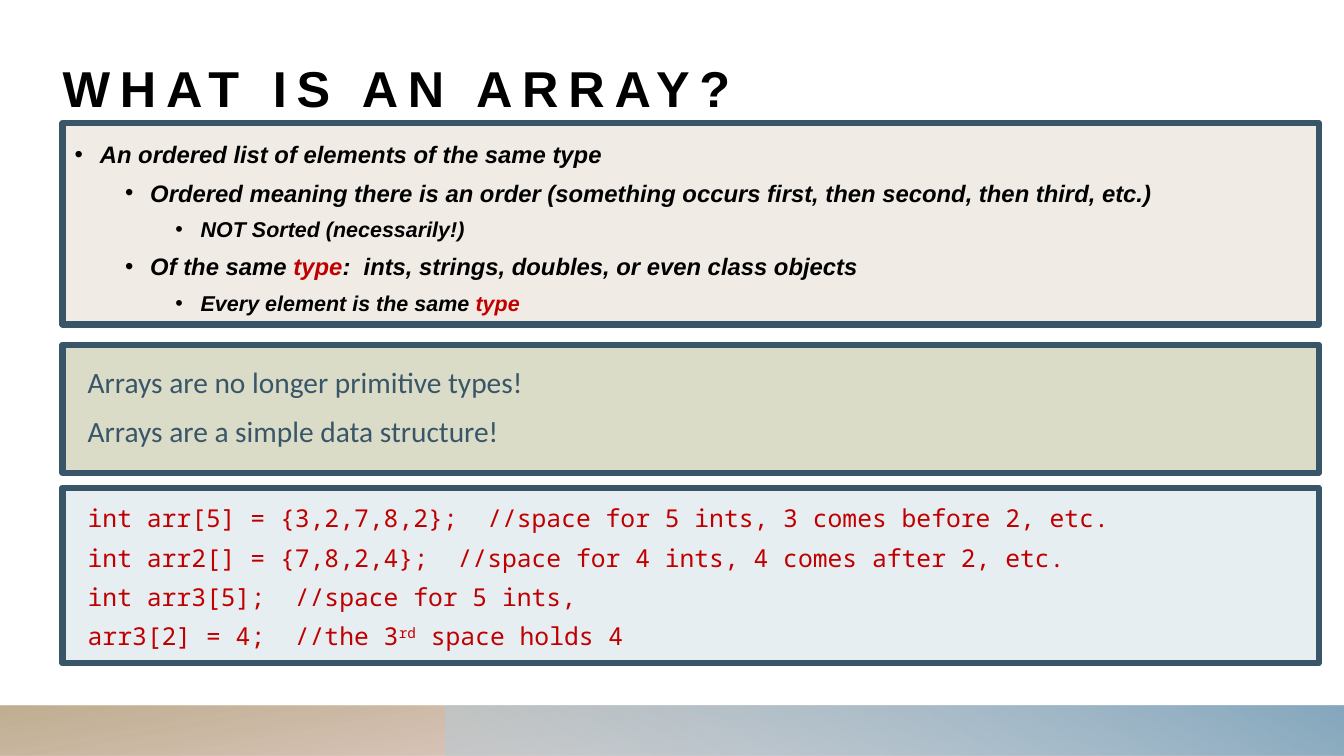
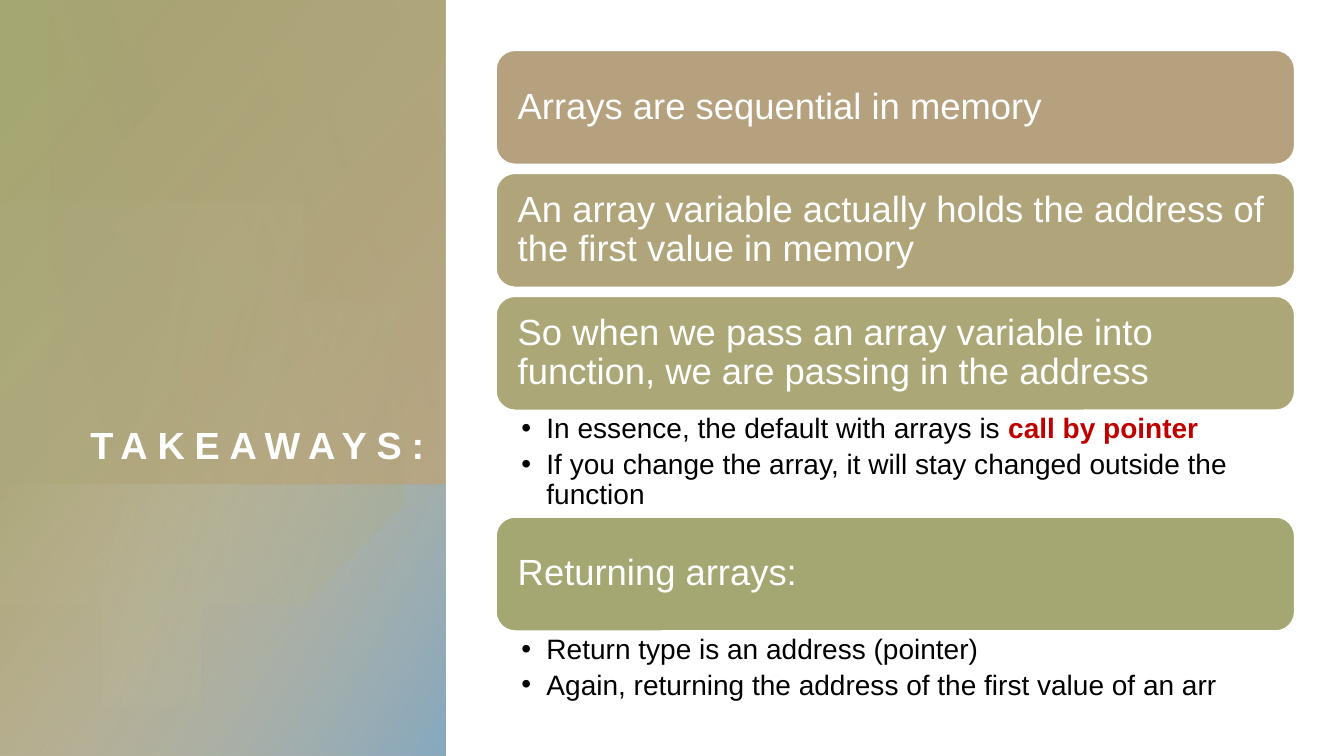
from math import acos, cos, sin

from pptx import Presentation
from pptx.dml.color import RGBColor
from pptx.enum.shapes import MSO_SHAPE
from pptx.enum.text import MSO_ANCHOR, MSO_AUTO_SIZE, PP_ALIGN
from pptx.oxml import parse_xml
from pptx.oxml.ns import nsdecls, qn
from pptx.util import Inches, Pt

BLACK = RGBColor(0x00, 0x00, 0x00)
WHITE = RGBColor(0xFF, 0xFF, 0xFF)
RED = RGBColor(0xC0, 0x00, 0x00)
SLATE = RGBColor(0x39, 0x56, 0x69)
CREAM = RGBColor(0xF0, 0xEC, 0xE5)
SAGE = RGBColor(0xDB, 0xDC, 0xC7)
ICE = RGBColor(0xE7, 0xEE, 0xF2)
TAN = RGBColor(0xB5, 0xA1, 0x7E)
KHAKI = RGBColor(0xB0, 0xA4, 0x7A)
MOSS = RGBColor(0xAC, 0xA7, 0x76)
OLIVE = RGBColor(0xA5, 0xA7, 0x72)
PALE_OLIVE = RGBColor(0xC9, 0xCA, 0xAA)
SAND = RGBColor(0xD3, 0xC7, 0xB2)
ROSE = RGBColor(0xBA, 0x8B, 0x7F)
BLUE = RGBColor(0x86, 0xA8, 0xBE)
PALE_BLUE = RGBColor(0xB6, 0xCB, 0xD8)

HEADING_FONT = "Arial"
NOTE_FONT = "Calibri"
CODE_FONT = "Noto Sans Mono"
SIDE_WIDTH = 4.42


class SlideBuilder:
    def __init__(self):
        self.deck = Presentation()
        self.deck.slide_width = Inches(13.33)
        self.deck.slide_height = Inches(7.5)
        self.page = None

    def new_page(self, layout):
        self.page = self.deck.slides.add_slide(self.deck.slide_layouts[layout])

    def place(self, index, left, top, width, height):
        box = self.page.placeholders[index]
        box.left, box.top = Inches(left), Inches(top)
        box.width, box.height = Inches(width), Inches(height)
        self.page.shapes._spTree.append(box._element)
        return box

    def shape(self, kind, left, top, width, height):
        shape = self.page.shapes.add_shape(
            kind, Inches(left), Inches(top), Inches(width), Inches(height))
        shape.shadow.inherit = False
        return shape

    def paint(self, shape, fill, line, weight):
        shape.fill.solid()
        shape.fill.fore_color.rgb = fill
        shape.line.color.rgb = line
        shape.line.width = Pt(weight)

    def blend(self, shape, angle, *stops):
        shape.line.fill.background()
        shape.fill.gradient()
        marks = "".join(
            f'<a:gs pos="{position * 1000}"><a:srgbClr val="{color}">'
            f'<a:alpha val="{opacity * 1000}"/></a:srgbClr></a:gs>'
            for position, color, opacity in stops)
        gradient = parse_xml(
            f'<a:gradFill rotWithShape="1" {nsdecls("a")}><a:gsLst>{marks}</a:gsLst>'
            f'<a:lin ang="{angle * 60000}" scaled="0"/></a:gradFill>')
        properties = shape._element.spPr
        properties.replace(properties.find(qn("a:gradFill")), gradient)

    def band(self, left, top, width, height, angle, *stops):
        self.blend(self.shape(MSO_SHAPE.RECTANGLE, left, top, width, height), angle, *stops)

    def disc(self, center_x, center_y, radius, angle, *stops):
        edge = acos(-center_x / radius)
        turns = [edge * step / 60 for step in range(-60, 61)]
        points = [(center_x + radius * cos(turn), center_y + radius * sin(turn))
                  for turn in turns]
        builder = self.page.shapes.build_freeform(*points[0], scale=Inches(1))
        builder.add_line_segments(points[1:], close=True)
        shape = builder.convert_to_shape()
        shape.shadow.inherit = False
        self.blend(shape, angle, *stops)

    def frame(self, shape, margins=(0, 0, 0, 0), anchor=MSO_ANCHOR.TOP):
        frame = shape.text_frame
        frame.word_wrap = True
        frame.auto_size = MSO_AUTO_SIZE.NONE
        frame.vertical_anchor = anchor
        (frame.margin_left, frame.margin_top,
         frame.margin_right, frame.margin_bottom) = map(Inches, margins)
        return frame

    def para(self, frame, first, spacing=1.0, before=0, after=0, align=PP_ALIGN.LEFT):
        para = frame.paragraphs[0] if first else frame.add_paragraph()
        para.alignment = align
        para.line_spacing = spacing
        para.space_before, para.space_after = Pt(before), Pt(after)
        return para

    def bullet(self, para, indent, level=0):
        para.level = level
        properties = para._p.get_or_add_pPr()
        properties.set("marL", str(Inches(indent)))
        properties.set("indent", str(Inches(-0.25)))
        properties.append(parse_xml(f'<a:buFont {nsdecls("a")} typeface="Arial"/>'))
        properties.append(parse_xml(f'<a:buChar {nsdecls("a")} char="•"/>'))

    def span(self, para, text, size, color, font=HEADING_FONT, bold=False, italic=False):
        span = para.add_run()
        span.text = text
        span.font.name, span.font.size = font, Pt(size)
        span.font.bold, span.font.italic = bold, italic
        span.font.color.rgb = color
        return span._r.get_or_add_rPr()

    def title(self, text, bounds, size, color, align=PP_ALIGN.LEFT):
        frame = self.frame(self.place(0, *bounds), anchor=MSO_ANCHOR.BOTTOM)
        para = self.para(frame, True, align=align)
        self.span(para, text, size, color, bold=True).set("spc", "700")

    def outline(self, bounds, items):
        box = self.place(1, *bounds)
        self.paint(box, CREAM, SLATE, 4.5)
        frame = self.frame(box, (0.12, 0.14, 0.18, 0.09))
        for number, (level, spans) in enumerate(items):
            para = self.para(frame, number == 0, 1.1, 5 if level else 10)
            self.bullet(para, 0.25 + 0.5 * level, level)
            for text, color in spans:
                self.span(para, text, 15.3 if level == 2 else 17, color,
                          bold=True, italic=True)

    def panel(self, bounds, fill, lines, font, size, color, spacing):
        shape = self.shape(MSO_SHAPE.RECTANGLE, *bounds)
        self.paint(shape, fill, SLATE, 4.5)
        frame = self.frame(shape, (0.25, 0.12, 0, 0))
        for number, line in enumerate(lines):
            para = self.para(frame, number == 0, spacing, 5)
            for text, raised in line:
                properties = self.span(para, text, size, color, font)
                if raised:
                    properties.set("baseline", "30000")

    def card(self, bounds, fill, text):
        shape = self.shape(MSO_SHAPE.ROUNDED_RECTANGLE, *bounds)
        self.paint(shape, fill, WHITE, 1)
        frame = self.frame(shape, (0.16, 0.16, 0.16, 0.16), MSO_ANCHOR.MIDDLE)
        self.span(self.para(frame, True, 0.9), text, 26, WHITE)

    def points(self, index, bounds, items):
        frame = self.frame(self.place(index, *bounds), (0.25, 0.04, 0.2, 0.04))
        for number, spans in enumerate(items):
            para = self.para(frame, number == 0, 0.9, after=4)
            self.bullet(para, 0.25)
            for text, color in spans:
                self.span(para, text, 20, color, bold=color == RED)

    def footer(self):
        self.band(0, 7, 13.33, 0.5, 260, (14, ROSE, 28), (100, TAN, 85))
        self.band(SIDE_WIDTH, 7, 13.33 - SIDE_WIDTH, 0.5, 300,
                  (9, PALE_BLUE, 55), (99, BLUE, 100))

    def side_panel(self):
        self.band(0, 0, SIDE_WIDTH, 7.5, 40, (8, OLIVE, 100), (100, TAN, 89))
        self.band(0, 4.81, SIDE_WIDTH, 2.69, 30, (0, SAND, 0), (99, BLUE, 100))
        self.disc(1.57, 4.25, 2.29, 14, (36, PALE_OLIVE, 6), (100, OLIVE, 26))
        self.band(0.5, 0, 3.92, 4.81, 160, (0, TAN, 29), (100, ROSE, 0))


def build_definition(builder):
    builder.new_page(1)
    builder.footer()
    builder.title("WHAT IS AN ARRAY?", (0.62, 0.31, 9.4, 0.86), 36, BLACK)
    builder.outline((0.62, 1.22, 12.46, 2), [
        (0, [("An ordered list of elements of the same type", BLACK)]),
        (1, [("Ordered meaning there is an order (something occurs first, "
              "then second, then third, etc.)", BLACK)]),
        (2, [("NOT Sorted (necessarily!)", BLACK)]),
        (1, [("Of the same ", BLACK), ("type", RED),
             (":  ints, strings, doubles, or even class objects", BLACK)]),
        (2, [("Every element is the same", BLACK), (" type", RED)]),
    ])
    builder.panel((0.62, 3.42, 12.46, 1.27), SAGE, [
        [("Arrays are no longer primitive types!", False)],
        [("Arrays are a simple data structure!", False)],
    ], NOTE_FONT, 21, SLATE, 1.2)
    builder.panel((0.62, 4.84, 12.46, 1.74), ICE, [
        [("int arr[5] = {3,2,7,8,2};  //space for 5 ints, 3 comes before 2, etc.", False)],
        [("int arr2[] = {7,8,2,4};  //space for 4 ints, 4 comes after 2, etc.", False)],
        [("int arr3[5];  //space for 5 ints,", False)],
        [("arr3[2] = 4;  //the 3", False), ("rd", True), (" space holds 4", False)],
    ], CODE_FONT, 17.6, RED, 1.1)


def build_takeaways(builder):
    builder.new_page(3)
    builder.side_panel()
    builder.title("TAKEAWAYS:", (0.5, 0.95, 3.71, 3.68), 27, WHITE, PP_ALIGN.RIGHT)
    pointer_notes = [
        [("In essence, the default with arrays is ", BLACK), ("call by pointer", RED)],
        [("If you change the array, it will stay changed outside the function", BLACK)],
    ]
    return_notes = [
        [("Return type is an address (pointer)", BLACK)],
        [("Again, returning the address of the first value of an arr", BLACK)],
    ]
    sections = [
        (TAN, "Arrays are sequential in memory", [], 0.09),
        (KHAKI, "An array variable actually holds the address of "
                "the first value in memory", [], 0.09),
        (MOSS, "So when we pass an array variable into function, "
               "we are passing in the address", pointer_notes, 1.06),
        (OLIVE, "Returning arrays:", return_notes, 0.75),
    ]
    left, top, width, height = 4.92, 0.5, 7.92, 1.13
    list_index = 1
    for fill, text, notes, room in sections:
        builder.card((left, top, width, height), fill, text)
        top += height
        if notes:
            builder.points(list_index, (left, top, width, room), notes)
            list_index += 1
        top += room


def main():
    builder = SlideBuilder()
    build_definition(builder)
    build_takeaways(builder)
    builder.deck.save("out.pptx")


if __name__ == "__main__":
    main()
